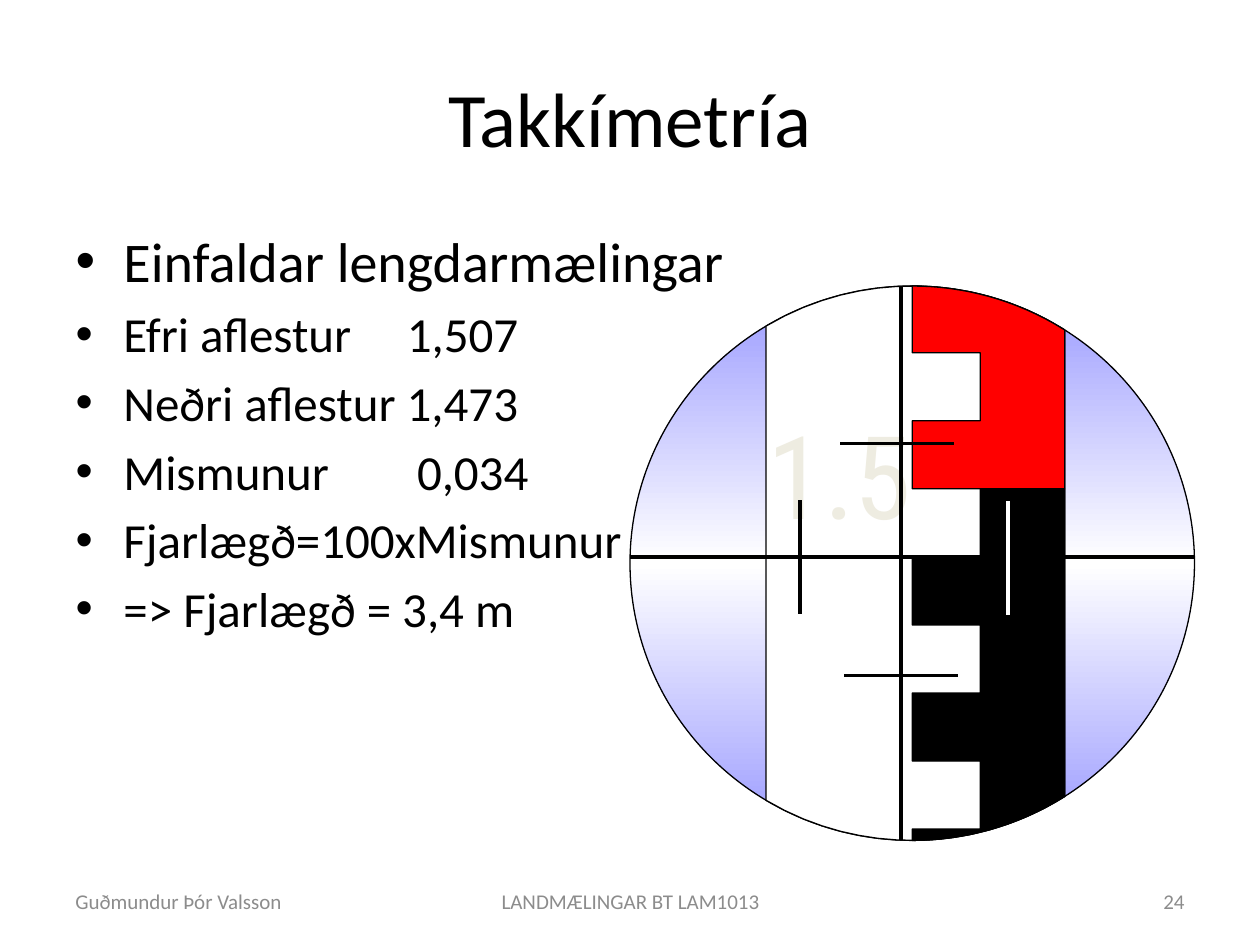
"""Build the tacheometry slide: readings on the left, levelling staff view on the right."""
from copy import deepcopy
from dataclasses import dataclass
from math import sqrt

from lxml import etree
from pptx import Presentation
from pptx import util as u
from pptx.dml.color import RGBColor
from pptx.enum import shapes, text
from pptx.oxml import ns

BLACK = RGBColor(0, 0, 0)
WHITE = RGBColor(255, 255, 255)
RED = RGBColor(255, 0, 0)
GREY = RGBColor(0x8C, 0x8C, 0x8C)
LENS_BLUE = RGBColor(0x99, 0x99, 0xFF)
CREAM = RGBColor(0xEE, 0xEC, 0xE1)
BODY_FONT = "Calibri"
CENTRE_X, CENTRE_Y, RADIUS_X, RADIUS_Y = 7.24, 4.47, 2.24, 2.2
STAFF_LEFT, STAFF_RIGHT = 6.08, 8.45
TOOTH_LEFT, TOOTH_RIGHT, TOOTH_HEIGHT = 7.24, 7.78, 0.54
COLOUR_BREAK = 3.88
HAIR = 0.9

Points = list[tuple[float, float]]


@dataclass
class Reading:
    label: str
    value: str = ""
    tab: float = 0
    size: int = 28


@dataclass
class Footer:
    wording: str
    left: float
    width: float
    align: text.PP_ALIGN


@dataclass
class Hair:
    x: float
    y: float
    width: float = 0
    height: float = 0
    colour: RGBColor = BLACK


READINGS = [
    Reading("Einfaldar lengdarmælingar", size=32),
    Reading("Efri aflestur", "1,507", 2.63),
    Reading("Neðri aflestur 1,473"),
    Reading("Mismunur", "0,034", 2.71),
    Reading("Fjarlægð=100xMismunur"),
    Reading("=> Fjarlægð = 3,4 m"),
]
FOOTERS = [
    Footer("Guðmundur Þór Valsson", 0.5, 2.33, text.PP_ALIGN.LEFT),
    Footer("LANDMÆLINGAR BT LAM1013", 3.42, 3.17, text.PP_ALIGN.CENTER),
    Footer("24", 7.17, 2.33, text.PP_ALIGN.RIGHT),
]
HAIRS = [
    Hair(5, 4.42, width=2 * RADIUS_X),
    Hair(7.15, 2.27, height=2 * RADIUS_Y),
    Hair(6.35, 3.97, height=HAIR),
    Hair(6.67, 3.52, width=HAIR),
    Hair(6.7, 5.36, width=HAIR),
    Hair(8, 3.98, height=HAIR, colour=WHITE),
]


def add_run(paragraph, wording: str, size: int, colour: RGBColor, font: str = BODY_FONT) -> None:
    run = paragraph.add_run()
    run.text = wording
    run.font.size = u.Pt(size)
    run.font.name = font
    run.font.color.rgb = colour


def place(shape, left: float, top: float, width: float, height: float) -> None:
    shape.left, shape.top = u.Inches(left), u.Inches(top)
    shape.width, shape.height = u.Inches(width), u.Inches(height)


def add_reading(paragraph, reading: Reading) -> None:
    props = paragraph._p.get_or_add_pPr()
    props.set("marL", str(u.Inches(0.38)))
    props.set("indent", str(-u.Inches(0.38)))
    etree.SubElement(props, ns.qn("a:buChar")).set("char", "•")
    if reading.value:
        tabs = etree.SubElement(props, ns.qn("a:tabLst"))
        stop = etree.SubElement(tabs, ns.qn("a:tab"))
        stop.set("pos", str(u.Inches(reading.tab)))
        stop.set("algn", "l")
    wording = f"{reading.label}\t{reading.value}" if reading.value else reading.label
    add_run(paragraph, wording, reading.size, BLACK)


def add_footer(slide, footer: Footer) -> None:
    box = slide.shapes.add_textbox(
        u.Inches(footer.left), u.Inches(6.95), u.Inches(footer.width), u.Inches(0.4))
    frame = box.text_frame
    frame.word_wrap = True
    frame.vertical_anchor = text.MSO_ANCHOR.MIDDLE
    frame.paragraphs[0].alignment = footer.align
    add_run(frame.paragraphs[0], footer.wording, 12, GREY)


def outline(shape) -> None:
    shape.shadow.inherit = False
    shape.line.color.rgb = BLACK
    shape.line.width = u.Pt(0.75)


def add_lens(slide) -> None:
    lens = slide.shapes.add_shape(
        shapes.MSO_SHAPE.OVAL, u.Inches(5), u.Inches(2.27),
        u.Inches(2 * RADIUS_X), u.Inches(2 * RADIUS_Y))
    outline(lens)
    lens.fill.gradient()
    lens.fill.gradient_angle = 270
    stops = lens._element.spPr.find(f".//{ns.qn('a:gsLst')}")
    stops.insert(1, deepcopy(stops[0]))
    for stop, position, colour in zip(
            lens.fill.gradient_stops, (0, 0.5, 1), (LENS_BLUE, WHITE, LENS_BLUE)):
        stop.position = position
        stop.color.rgb = colour


def rim(start: float, end: float, side: int, steps: int = 16) -> Points:
    """Return points along the lens rim, with side -1 for the top and 1 for the bottom."""
    xs = [start + (end - start) * i / steps for i in range(steps + 1)]
    return [(x, CENTRE_Y + side * RADIUS_Y * sqrt(1 - ((x - CENTRE_X) / RADIUS_X) ** 2))
            for x in xs]


def teeth(first_edge: int, last_edge: int) -> Points:
    """Return the stepped left edge of the staff between two tooth edges."""
    points = []
    for edge in range(first_edge, last_edge + 1):
        y = COLOUR_BREAK + edge * TOOTH_HEIGHT
        sides = (TOOTH_RIGHT, TOOTH_LEFT) if edge % 2 else (TOOTH_LEFT, TOOTH_RIGHT)
        points += [(x, y) for x in sides]
    return points


def add_outline(group, points: Points, colour: RGBColor) -> None:
    corners = [(u.Inches(x), u.Inches(y)) for x, y in points]
    builder = group.shapes.build_freeform(*corners[0])
    builder.add_line_segments(corners[1:], close=True)
    area = builder.convert_to_shape()
    outline(area)
    area.fill.solid()
    area.fill.fore_color.rgb = colour


def add_staff(slide) -> None:
    staff = slide.shapes.add_group_shape()
    add_outline(staff, rim(STAFF_LEFT, STAFF_RIGHT, -1) + rim(STAFF_RIGHT, STAFF_LEFT, 1), WHITE)
    label = staff.shapes.add_textbox(
        u.Inches(5.99), u.Inches(3.16), u.Inches(1.38), u.Inches(1.37))
    label.text_frame.word_wrap = False
    label.text_frame.auto_size = text.MSO_AUTO_SIZE.SHAPE_TO_FIT_TEXT
    add_run(label.text_frame.paragraphs[0], "1.5", 66, CREAM, "Roboto Condensed")

    break_right = (STAFF_RIGHT, COLOUR_BREAK)
    red_teeth = teeth(-2, -1)[::-1]
    add_outline(staff, [(TOOTH_LEFT, COLOUR_BREAK), *red_teeth,
                        *rim(TOOTH_LEFT, STAFF_RIGHT, -1), break_right], RED)
    black_teeth = [(TOOTH_RIGHT, COLOUR_BREAK), *teeth(1, 5)]
    add_outline(staff, [*black_teeth, *rim(TOOTH_LEFT, STAFF_RIGHT, 1), break_right], BLACK)


def add_hair(slide, hair: Hair) -> None:
    line = slide.shapes.add_connector(
        shapes.MSO_CONNECTOR.STRAIGHT, u.Inches(hair.x), u.Inches(hair.y),
        u.Inches(hair.x + hair.width), u.Inches(hair.y + hair.height))
    line.line.color.rgb = hair.colour
    line.line.width = u.Pt(2)
    etree.SubElement(line._element.spPr, ns.qn("a:effectLst"))


def main() -> None:
    deck = Presentation()
    deck.slide_width, deck.slide_height = u.Inches(10), u.Inches(7.5)
    slide = deck.slides.add_slide(deck.slide_layouts[1])
    title, readings = slide.placeholders
    place(title, 0.5, 0.3, 9, 1.25)
    add_run(title.text_frame.paragraphs[0], "Takkímetría", 44, BLACK)
    place(readings, 0.5, 1.75, 5.44, 4.95)
    frame = readings.text_frame
    for index, reading in enumerate(READINGS):
        add_reading(frame.add_paragraph() if index else frame.paragraphs[0], reading)
    for footer in FOOTERS:
        add_footer(slide, footer)
    add_lens(slide)
    add_staff(slide)
    for hair in HAIRS:
        add_hair(slide, hair)
    deck.save("out.pptx")


if __name__ == "__main__":
    main()
